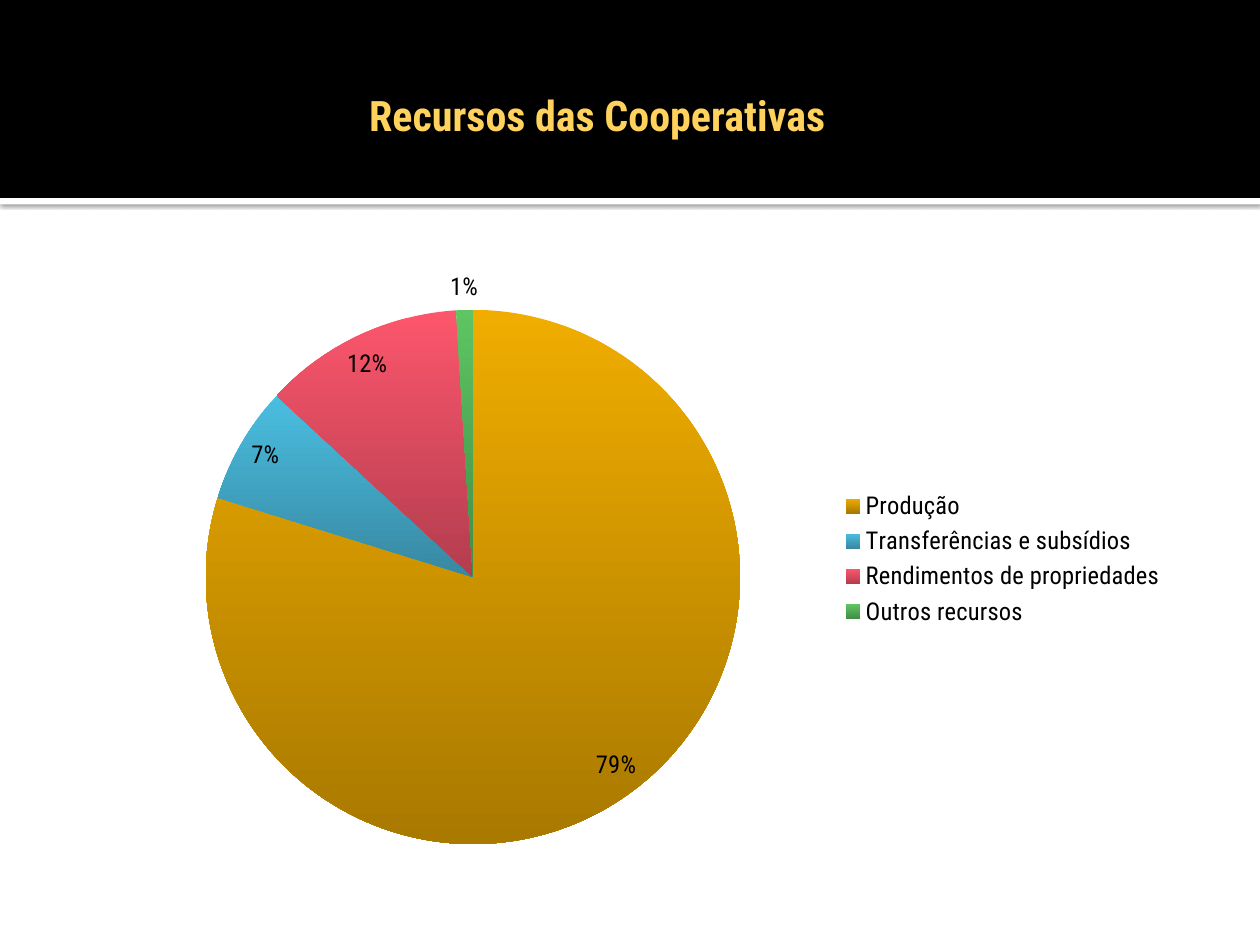
"""Build the slide on cooperative resources with its pie chart."""
from dataclasses import dataclass

from lxml import etree
from pptx import Presentation
from pptx.chart.chart import Chart
from pptx.chart.data import CategoryChartData
from pptx.dml.color import RGBColor
from pptx.enum.chart import XL_CHART_TYPE, XL_LABEL_POSITION, XL_LEGEND_POSITION
from pptx.enum.shapes import MSO_SHAPE
from pptx.enum.text import MSO_ANCHOR, PP_ALIGN
from pptx.oxml import parse_xml
from pptx.oxml.ns import nsdecls, qn
from pptx.shapes.autoshape import Shape
from pptx.slide import Slide
from pptx.util import Cm, Pt

PIE = XL_CHART_TYPE.PIE
BEST_FIT = XL_LABEL_POSITION.BEST_FIT
LEGEND_RIGHT = XL_LEGEND_POSITION.RIGHT
RECTANGLE = MSO_SHAPE.RECTANGLE
MIDDLE = MSO_ANCHOR.MIDDLE
CENTER = PP_ALIGN.CENTER

FONT = "Roboto Condensed"
BLACK = RGBColor(0x00, 0x00, 0x00)
WHITE = RGBColor(0xFF, 0xFF, 0xFF)
TITLE_GOLD = RGBColor(0xFF, 0xD2, 0x5D)
PAGE_WIDTH = 25.4
BAND_HEIGHT = 3.99


@dataclass
class Slice:
    """A pie slice with its vertical gradient."""
    label: str
    value: int
    top: RGBColor
    bottom: RGBColor


@dataclass
class Strip:
    """A full-width strip of the header, in centimetres."""
    top: float
    height: float
    color: RGBColor


SLICES = [
    Slice("Produção", 79, RGBColor(0xF0, 0xAD, 0x00), RGBColor(0xA9, 0x79, 0x00)),
    Slice("Transferências e subsídios", 7, RGBColor(0x4A, 0xBE, 0xE0), RGBColor(0x38, 0x88, 0xA2)),
    Slice("Rendimentos de propriedades", 12, RGBColor(0xFC, 0x56, 0x6C), RGBColor(0xB3, 0x3D, 0x4E)),
    Slice("Outros recursos", 1, RGBColor(0x5E, 0xC5, 0x62), RGBColor(0x42, 0x8D, 0x46)),
]
RULE = Strip(BAND_HEIGHT, 0.13, WHITE)
BAND = Strip(0, BAND_HEIGHT, BLACK)


def draw_strip(page: Slide, strip: Strip) -> Shape:
    """Draw a plain strip across the page."""
    shape = page.shapes.add_shape(
        RECTANGLE, Cm(0), Cm(strip.top), Cm(PAGE_WIDTH), Cm(strip.height))
    shape.shadow.inherit = False
    shape.fill.solid()
    shape.fill.fore_color.rgb = strip.color
    shape.line.fill.background()
    return shape


def cast_shadow(shape: Shape) -> None:
    """Give a shape a soft shadow below it."""
    effects = shape.element.spPr.find(qn("a:effectLst"))
    effects.append(parse_xml(
        f'<a:outerShdw {nsdecls("a")} blurRad="{Pt(2.5)}" dist="{Pt(0.8)}" dir="5400000">'
        '<a:srgbClr val="000000"><a:alpha val="60000"/></a:srgbClr></a:outerShdw>'))


def write_title(page: Slide, text: str) -> None:
    """Fill the title placeholder and bring it in front of the band."""
    title = page.shapes.title
    title.left, title.top, title.width, title.height = Cm(6.07), Cm(1.68), Cm(11.94), Cm(1.27)
    frame = title.text_frame
    frame.text = text
    frame.vertical_anchor = MIDDLE
    paragraph = frame.paragraphs[0]
    paragraph.alignment = CENTER
    font = paragraph.runs[0].font
    font.name, font.size, font.bold = FONT, Pt(24), True
    font.color.rgb = TITLE_GOLD
    page.shapes.element.append(title.element)


def place_plot(chart: Chart, **fractions: float) -> None:
    """Fix the inner plot area as fractions of the chart."""
    plot_area = chart.plots[0]._element.getparent()
    for old in plot_area.findall(qn("c:layout")):
        plot_area.remove(old)
    layout = etree.Element(qn("c:layout"))
    manual = etree.SubElement(layout, qn("c:manualLayout"))
    settings = {"layoutTarget": "inner", "xMode": "edge", "yMode": "edge", **fractions}
    for name, value in settings.items():
        etree.SubElement(manual, qn(f"c:{name}")).set("val", str(value))
    plot_area.insert(0, layout)


def draw_pie(page: Slide, slices: list[Slice]) -> None:
    """Draw the pie chart with its labels and legend."""
    data = CategoryChartData()
    data.categories = [item.label for item in slices]
    data.add_series("Series 1", [item.value for item in slices])
    chart = page.shapes.add_chart(
        PIE, Cm(2.21), Cm(5.13), Cm(21.54), Cm(12.27), data).chart
    chart.has_title = False
    chart.font.name, chart.font.size = FONT, Pt(14)
    chart.font.color.rgb = BLACK
    chart.has_legend = True
    chart.legend.position = LEGEND_RIGHT
    chart.legend.include_in_layout = False
    place_plot(chart, x=0.09, y=0.09, w=0.5, h=0.88)

    plot = chart.plots[0]
    plot.vary_by_categories = True
    plot.has_data_labels = True
    labels = plot.data_labels
    labels.show_value = True
    labels.number_format = '0"%"'
    labels.number_format_is_linked = False
    labels.position = BEST_FIT
    for index, item in enumerate(slices):
        fill = plot.series[0].points[index].format.fill
        fill.gradient()
        fill.gradient_angle = 270
        for stop, color, position in zip(fill.gradient_stops, (item.top, item.bottom), (0, 1)):
            stop.color.rgb = color
            stop.position = position


def main() -> None:
    """Assemble and save the deck."""
    deck = Presentation()
    deck.slide_width, deck.slide_height = Cm(PAGE_WIDTH), Cm(19.05)
    page = deck.slides.add_slide(deck.slide_layouts[5])
    cast_shadow(draw_strip(page, RULE))
    draw_strip(page, BAND)
    draw_pie(page, SLICES)
    write_title(page, "Recursos das Cooperativas")
    deck.save("out.pptx")


if __name__ == "__main__":
    main()
